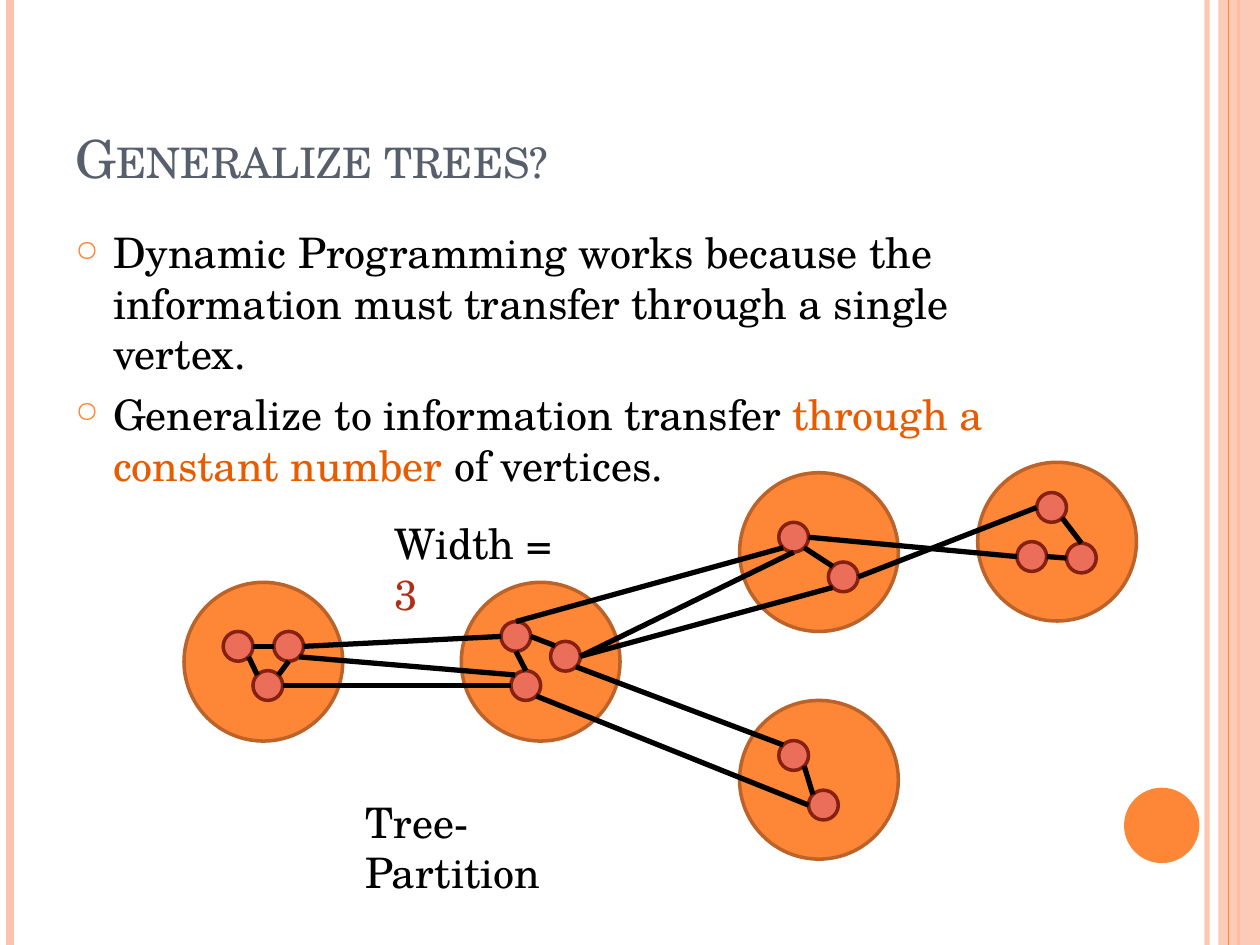
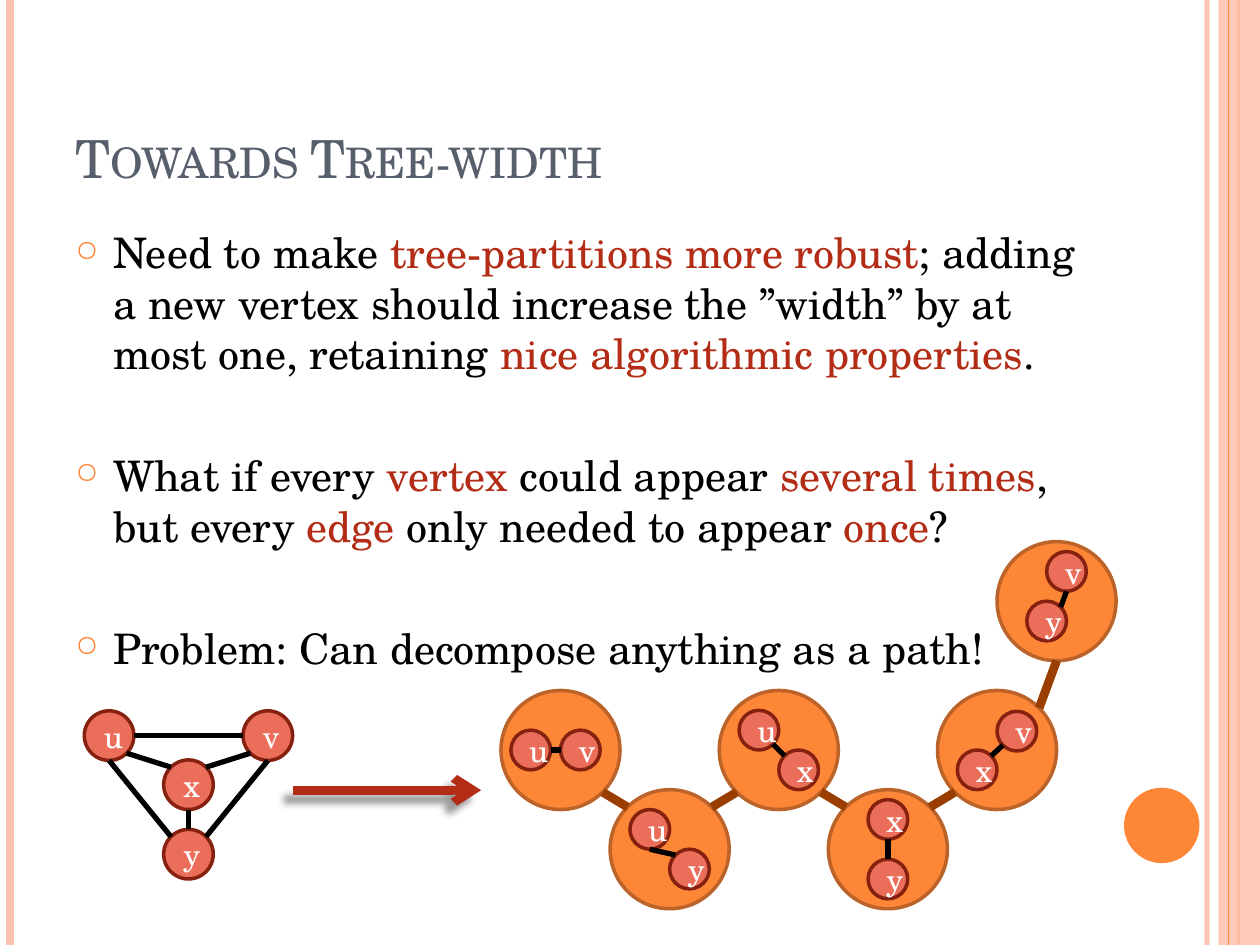
from lxml import etree
from pptx import Presentation
from pptx.dml.color import RGBColor
from pptx.enum import shapes, text
from pptx.oxml import ns
from pptx.util import Cm, Pt

FONT = "TeX Gyre Schola"
ORANGE, PEACH, RIM = "FE8637", "FEC3AE", "BC6329"
ROSE, DARK_RED, RED = "EB6E5A", "862110", "B32C16"
SLATE, BLACK, WHITE, BROWN, AMBER = "575F6D", "000000", "FFFFFF", "9A3D01", "E75C01"
PAGE_W, PAGE_H = 25.4, 19.05

# --- Content: words between asterisks take the accent colour ---
PARTITION = {
    "title": "Generalize trees?",
    "accent": AMBER,
    "gap": 6,
    "points": [
        "Dynamic Programming works because the information must transfer "
        "through a single vertex.",
        "Generalize to information transfer *through a constant number* of vertices.",
    ],
}
TREEWIDTH = {
    "title": "Towards Tree-width",
    "accent": RED,
    "gap": 41,
    "points": [
        "Need to make *tree-partitions more robust*; adding a new vertex should "
        "increase the ”width” by at most one, retaining *nice algorithmic properties*.",
        "What if every *vertex *could appear* several times*, but every *edge* "
        "only needed to appear *once*?",
        "Problem: Can decompose anything as a path!",
    ],
}

# Centres in cm; an edge names a vertex and its compass side, twice
PARTITION_BAGS = [(5.31, 13.34), (10.9, 13.34), (16.51, 11.13), (16.51, 15.72),
                  (21.31, 10.92)]
PARTITION_VERTICES = {
    "a1": (4.8, 13.03), "a2": (5.82, 13.03), "a3": (5.4, 13.82),
    "b1": (10.4, 12.83), "b2": (11.4, 13.23), "b3": (10.6, 13.82),
    "c1": (16, 10.83), "c2": (17, 11.63),
    "d1": (16, 15.23), "d2": (16.6, 16.23),
    "e1": (21.2, 10.23), "e2": (21.8, 11.25), "e3": (20.8, 11.22),
}
PARTITION_EDGES = [
    "a1 E a2 W", "a3 NW a1 SE", "a3 NE a2 S", "b3 N b1 S", "b2 NW b1 E",
    "c1 SE c2 NW", "d2 NW d1 SE", "e3 E e2 W", "e2 N e1 SE",
    "a3 E b3 W", "a2 E b1 W", "b3 NW a2 SE", "b2 E c2 SW", "b1 N c1 SW",
    "b2 SE d1 NW", "b3 SE d2 W", "b2 E c1 S", "c1 E e3 W", "c2 E e1 W",
]
CLIQUE_VERTICES = {"u": (2.2, 14.83), "v": (5.4, 14.83), "y": (3.8, 17.22),
                   "x": (3.8, 15.82)}
CLIQUE_EDGES = ["u E v W", "y NW u S", "y NE v S", "u SE x NW", "x NE v SW", "y N x S"]

# Each bag of the path: vertex offsets from its centre, and its one edge
PATH = [
    ({"u": (-0.6, 0), "v": (0.4, 0)}, "u E v W"),
    ({"u": (-0.4, -0.4), "y": (0.4, 0.4)}, "y NW u S"),
    ({"u": (-0.4, -0.4), "x": (0.4, 0.4)}, "u SE x NW"),
    ({"y": (0, 0.6), "x": (0, -0.6)}, "y N x S"),
    ({"v": (0.4, -0.38), "x": (-0.4, 0.4)}, "x NE v SW"),
    ({"v": (0.2, -0.6), "y": (-0.2, 0.4)}, "y NE v S"),
]
PATH_EDGES = ["0 SE 1 NW", "1 NE 2 SW", "2 SE 3 NW", "3 NE 4 SW", "4 NE 5 S"]


# --- Drawing helpers ---
def rgb(value):
    return RGBColor.from_string(value)


def add_xml(parent, tag, **attributes):
    return etree.SubElement(parent, ns.qn(tag), attributes)


def set_alpha(fill, percent):
    colour = next(fill.iter(ns.qn("a:srgbClr")))
    add_xml(colour, "a:alpha", val=str(percent * 1000))


def draw_shape(slide, kind, box, fill, rim=None):
    shape = slide.shapes.add_shape(kind, *map(Cm, box))
    shape.shadow.inherit = False
    shape.fill.solid()
    shape.fill.fore_color.rgb = rgb(fill)
    if rim:
        shape.line.color.rgb = rgb(rim)
        shape.line.width = Pt(2)
    else:
        shape.line.fill.background()
    return shape


def draw_circle(slide, centre, size, fill, rim=None):
    x, y = centre
    box = (x - size / 2, y - size / 2, size, size)
    return draw_shape(slide, shapes.MSO_SHAPE.OVAL, box, fill, rim)


def draw_line(slide, start, end, colour, width):
    line = slide.shapes.add_connector(shapes.MSO_CONNECTOR.STRAIGHT,
                                      *map(Cm, (*start, *end)))
    line.line.color.rgb = rgb(colour)
    line.line.width = Pt(width)
    effects = add_xml(line._element.spPr, "a:effectLst")
    return line, effects


def rim_point(centre, size, side):
    dx = ("E" in side) - ("W" in side)
    dy = ("S" in side) - ("N" in side)
    reach = size / 2 * (0.707 if dx and dy else 1)
    return centre[0] + dx * reach, centre[1] + dy * reach


def draw_edges(slide, centres, size, edges, colour=BLACK, width=3):
    for edge in edges:
        first, side, second, other_side = edge.split()
        draw_line(slide, rim_point(centres[first], size, side),
                  rim_point(centres[second], size, other_side), colour, width)


def draw_graph(slide, vertices, size, edges, labelled=True):
    for name, centre in vertices.items():
        vertex = draw_circle(slide, centre, size, ROSE, DARK_RED)
        if labelled:
            write(vertex.text_frame.paragraphs[0], name, 18, WHITE)
            vertex.text_frame.paragraphs[0].alignment = text.PP_ALIGN.CENTER
            vertex.text_frame.vertical_anchor = text.MSO_ANCHOR.MIDDLE
    draw_edges(slide, vertices, size, edges)


def write(paragraph, marked, size, colour, accent=RED):
    paragraph.font.name = FONT
    paragraph.font.size = Pt(size)
    paragraph.font.color.rgb = rgb(colour)
    for index, words in enumerate(marked.split("*")):
        if words:
            run = paragraph.add_run()
            run.text = words
            if index % 2:
                run.font.color.rgb = rgb(accent)


def add_text(slide, box):
    frame = slide.shapes.add_textbox(*map(Cm, box)).text_frame
    frame.word_wrap = True
    return frame


def add_caption(slide, box, marked):
    write(add_text(slide, box).paragraphs[0], marked, 24, BLACK)


def add_bullet(paragraph):
    props = paragraph._p.get_or_add_pPr()
    props.set("marL", str(Cm(0.76)))
    props.set("indent", str(-Cm(0.76)))
    add_xml(add_xml(props, "a:buClr"), "a:srgbClr", val=ORANGE)
    add_xml(props, "a:buSzPct", val="70000")
    add_xml(props, "a:buChar", char="○")


# --- Shared slide frame: side bands, disc, title and points ---
def draw_bands(slide):
    def rule(x, colour, width):
        return draw_line(slide, (x, 0), (x, PAGE_H), colour, width)[0]

    set_alpha(rule(24.33, PEACH, 3)._element, 93)
    rule(0.2, PEACH, 4.5)
    rule(24.97, ORANGE, 1.5)
    band = draw_shape(slide, shapes.MSO_SHAPE.RECTANGLE, (24.56, 0, 0.84, PAGE_H), PEACH)
    set_alpha(band._element, 87)
    rule(24.77, ORANGE, 0.75)
    draw_circle(slide, (23.42, 16.64), 1.52, ORANGE)


def start_slide(deck, content, bags, bag_size):
    slide = deck.slides.add_slide(deck.slide_layouts[6])
    draw_bands(slide)
    for centre in bags:
        draw_circle(slide, centre, bag_size, ORANGE, RIM)

    title = add_text(slide, (1.27, 0.76, 20.75, 3.18))
    title.vertical_anchor = text.MSO_ANCHOR.BOTTOM
    heading = title.paragraphs[0]
    write(heading, content["title"], 30, SLATE)
    heading.runs[0]._r.get_or_add_rPr().set("cap", "small")

    body = add_text(slide, (1.27, 4.45, 20.75, 13.54))
    for index, words in enumerate(content["points"]):
        point = body.add_paragraph() if index else body.paragraphs[0]
        add_bullet(point)
        point.space_before = Pt(content["gap"] if index else 6)
        write(point, words, 24, BLACK, content["accent"])
    return slide


# --- Slides ---
def build_partition(deck):
    slide = start_slide(deck, PARTITION, PARTITION_BAGS, 3.2)
    add_caption(slide, (7.11, 15.93, 5.66, 1.27), "Tree-Partition")
    draw_graph(slide, PARTITION_VERTICES, 0.6, PARTITION_EDGES, labelled=False)
    add_caption(slide, (7.7, 10.31, 4.14, 1.27), "Width = *3*")


def build_treewidth(deck):
    bag_size = 2.4
    bags = [(11.3 + 2.2 * i, 17.12 if i % 2 else 15.12) for i in range(5)]
    bags.append((21.3, 12.12))
    slide = start_slide(deck, TREEWIDTH, bags, bag_size)
    draw_graph(slide, CLIQUE_VERTICES, 1, CLIQUE_EDGES)

    # Arrow from the clique to its path
    arrow, effects = draw_line(slide, (5.9, 15.93), (9.7, 15.93), RED, 5)
    add_xml(arrow.line._get_or_add_ln(), "a:tailEnd", type="arrow")
    shadow = add_xml(effects, "a:outerShdw", blurRad=str(Pt(4)), dist=str(Pt(7)),
                     dir="8100000", algn="tl", rotWithShape="0")
    add_xml(shadow, "a:srgbClr", val=BLACK)
    set_alpha(shadow, 40)

    numbered = {str(i): centre for i, centre in enumerate(bags)}
    draw_edges(slide, numbered, bag_size, PATH_EDGES, BROWN, 5)
    for (x, y), (offsets, edge) in zip(bags, PATH):
        vertices = {name: (x + dx, y + dy) for name, (dx, dy) in offsets.items()}
        draw_graph(slide, vertices, 0.8, [edge])


def main():
    deck = Presentation()
    deck.slide_width, deck.slide_height = Cm(PAGE_W), Cm(PAGE_H)
    build_partition(deck)
    build_treewidth(deck)
    deck.save("out.pptx")


if __name__ == "__main__":
    main()
